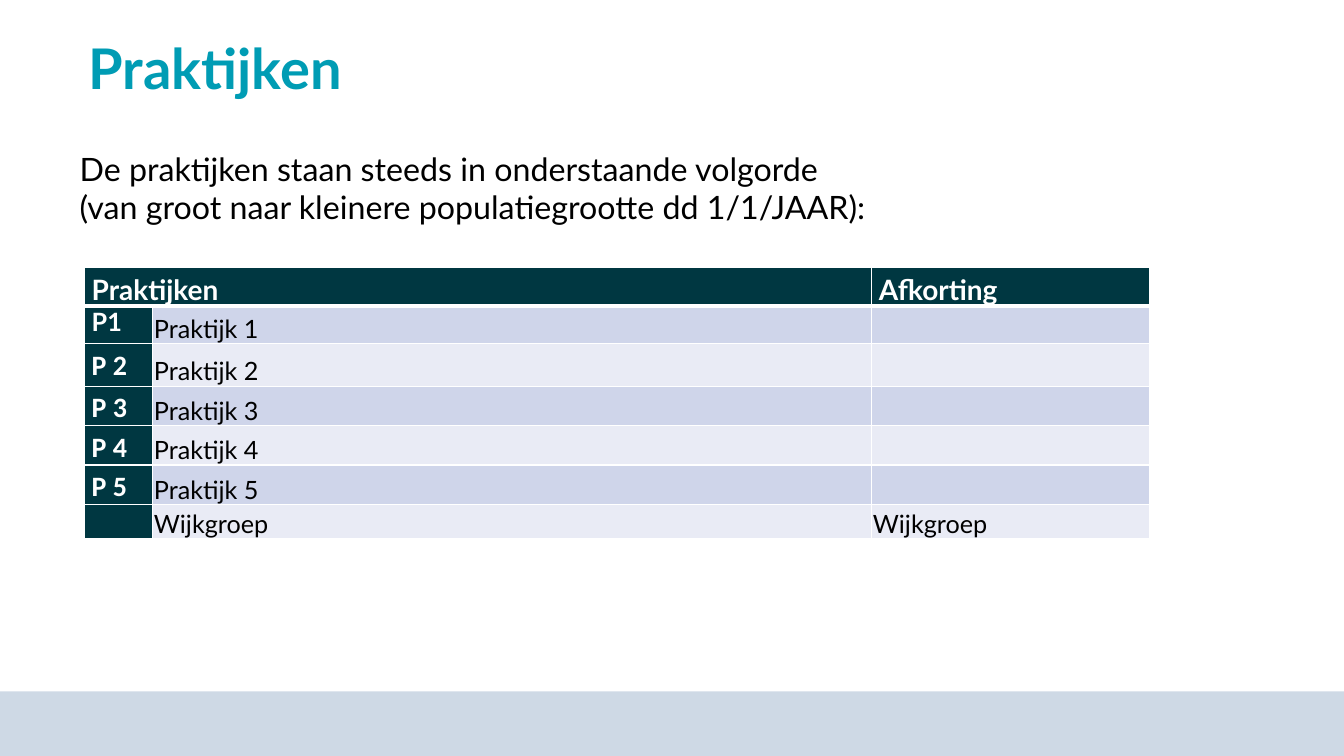
from dataclasses import dataclass

from lxml import etree
from pptx import Presentation
from pptx import util as u
from pptx.dml.color import RGBColor
from pptx.enum import shapes, text
from pptx.oxml import ns


@dataclass(frozen=True)
class Theme:
    teal: str = "009CB4"
    dark: str = "003741"
    band: str = "CED9E5"
    odd: str = "CFD5EA"
    even: str = "E9EBF5"
    white: str = "FFFFFF"
    black: str = "000000"
    font: str = "Lato"
    code: str = "Calibri"
    title: int = 40
    body: int = 23
    head: int = 20
    cell: int = 18


THEME = Theme()
COLS = (1.72, 18.12, 7.01)
ROWS = (0.86, 0.94, 1.07) + (0.86,) * 4
TABLE = [
    ("Praktijken", "", "Afkorting"),
    ("P1", "Praktijk 1", ""),
    *((f"P {n}", f"Praktijk {n}", "") for n in range(2, 6)),
    ("", "Wijkgroep", "Wijkgroep"),
]


def style(par, size, color, bold=False, font=THEME.font):
    for run in par.runs:
        run.font.size = u.Pt(size)
        run.font.name = font
        run.font.bold = bold
        run.font.color.rgb = RGBColor.from_string(color)


def place(shape, left, top, width, height):
    shape.left, shape.top = u.Cm(left), u.Cm(top)
    shape.width, shape.height = u.Cm(width), u.Cm(height)


def add_title(slide, words):
    title = slide.shapes.title
    place(title, 1.98, 0.91, 27.13, 1.8)
    frame = title.text_frame
    frame.text = words
    frame.vertical_anchor = text.MSO_ANCHOR.TOP
    par = frame.paragraphs[0]
    par.alignment = text.PP_ALIGN.LEFT
    par.line_spacing = 0.9
    style(par, THEME.title, THEME.teal, True)


def add_body(slide, lines):
    body = slide.placeholders[1]
    place(body, 1.75, 3.61, 30.4, 2.24)
    frame = body.text_frame
    frame.text = "\n".join(lines)
    frame.vertical_anchor = text.MSO_ANCHOR.MIDDLE
    for par in frame.paragraphs:
        props = par._p.get_or_add_pPr()
        props.set("marL", "0")
        props.set("indent", "0")
        etree.SubElement(props, ns.qn("a:buNone"))
        par.space_before = u.Pt(0)
        style(par, THEME.body, THEME.black)


def add_band(slide):
    band = slide.shapes.add_shape(shapes.MSO_SHAPE.RECTANGLE, 0, 0, 0, 0)
    place(band, 0, 17.42, 33.87, 1.63)
    band.shadow.inherit = False
    band.fill.solid()
    band.fill.fore_color.rgb = RGBColor.from_string(THEME.band)
    band.line.fill.background()


def set_edges(cell, row):
    """Draw white cell borders, thick between the header and first row."""
    thick = {"T": row == 1, "B": row == 0}
    props = cell._tc.get_or_add_tcPr()
    for spot, side in enumerate("LRTB"):
        line = etree.Element(ns.qn(f"a:ln{side}"))
        line.set("w", str(u.Pt(3 if thick.get(side) else 1)))
        fill = etree.SubElement(line, ns.qn("a:solidFill"))
        etree.SubElement(fill, ns.qn("a:srgbClr")).set("val", THEME.white)
        props.insert(spot, line)


def fill_cell(cell, words, row, col):
    label = row == 0 or col == 0
    stripe = THEME.odd if row % 2 else THEME.even
    cell.fill.solid()
    cell.fill.fore_color.rgb = RGBColor.from_string(THEME.dark if label else stripe)
    set_edges(cell, row)
    cell.margin_left = cell.margin_right = u.Cm(0.18 if label else 0.03)
    cell.margin_top = u.Cm(0 if label else 0.03)
    cell.margin_bottom = 0
    cell.text_frame.text = words
    par = cell.text_frame.paragraphs[0]
    if not label:
        cell.vertical_anchor = text.MSO_ANCHOR.BOTTOM
        style(par, THEME.cell, THEME.black)
    elif row == 1:
        style(par, THEME.cell, THEME.white, True)
    elif words:
        par.line_spacing = 1.15
        par.space_after = u.Pt(10)
        font = THEME.code if row else THEME.font
        style(par, THEME.head, THEME.white, True, font)


def add_grid(slide):
    frame = slide.shapes.add_table(
        len(ROWS), len(COLS), u.Cm(2.13), u.Cm(6.74), u.Cm(sum(COLS)), u.Cm(sum(ROWS))
    )
    grid = frame.table
    for col, width in zip(grid.columns, COLS):
        col.width = u.Cm(width)
    for row, height in zip(grid.rows, ROWS):
        row.height = u.Cm(height)
    for row, line in enumerate(TABLE):
        for col, words in enumerate(line):
            fill_cell(grid.cell(row, col), words, row, col)
    grid.cell(0, 0).merge(grid.cell(0, 1))


def main():
    deck = Presentation()
    deck.slide_width, deck.slide_height = u.Cm(33.87), u.Cm(19.05)
    slide = deck.slides.add_slide(deck.slide_layouts[1])
    add_band(slide)
    add_grid(slide)
    add_body(slide, [
        "De praktijken staan steeds in onderstaande volgorde",
        "(van groot naar kleinere populatiegrootte dd 1/1/JAAR):",
    ])
    add_title(slide, "Praktijken")
    deck.save("out.pptx")


if __name__ == "__main__":
    main()
